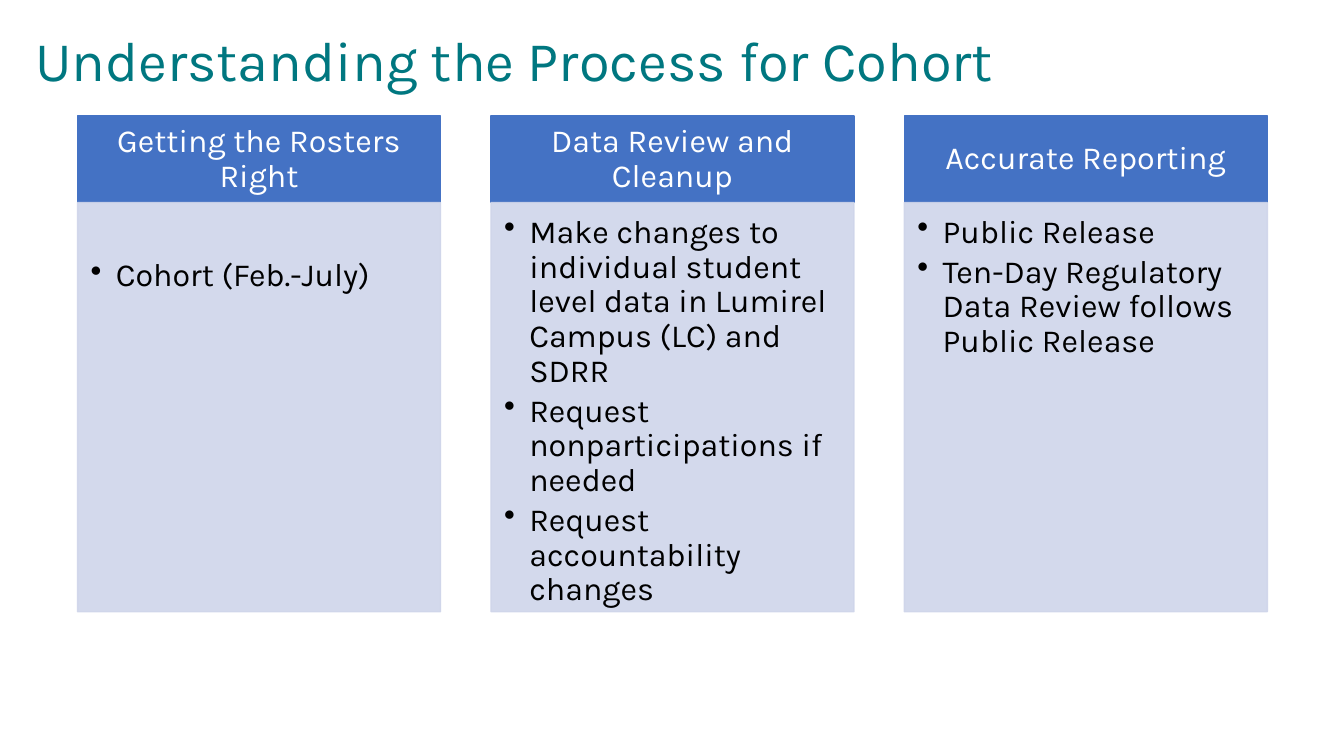
import dataclasses

import lxml.etree
import pptx
import pptx.dml.color
import pptx.enum.shapes
import pptx.enum.text
import pptx.oxml.ns
import pptx.util

Inches = pptx.util.Inches
Pt = pptx.util.Pt
qn = pptx.oxml.ns.qn
Align = pptx.enum.text.PP_ALIGN
Anchor = pptx.enum.text.MSO_ANCHOR


@dataclasses.dataclass(frozen=True)
class Theme:
    """Colours and type sizes of the slide."""

    font: str = "Karla"
    title: str = "007780"
    header: str = "4472C4"
    header_text: str = "FFFFFF"
    panel: str = "CFD5EA"
    panel_text: str = "000000"
    title_size: int = 40
    text_size: int = 23
    panel_opacity: int = 90


THEME = Theme()
COLUMNS = [
    ("Getting the Rosters Right", ["Cohort (Feb.-July)"], 0.56),
    (
        "Data Review and Cleanup",
        [
            "Make changes to individual student level data in Lumirel Campus (LC) and SDRR",
            "Request nonparticipations if needed",
            "Request accountability changes",
        ],
        0.13,
    ),
    (
        "Accurate Reporting",
        ["Public Release", "Ten-Day Regulatory Data Review follows Public Release"],
        0.13,
    ),
]


def rgb(colour):
    """Return a colour object for a hex string."""
    return pptx.dml.color.RGBColor.from_string(colour)


def set_frame(box, anchor, left, top, right, bottom):
    """Set wrapping, anchor and insets in inches, and return the text frame."""
    frame = box.text_frame
    frame.word_wrap = True
    frame.vertical_anchor = anchor
    frame.margin_left, frame.margin_top = Inches(left), Inches(top)
    frame.margin_right, frame.margin_bottom = Inches(right), Inches(bottom)
    return frame


def add_span(para, text, size, colour):
    """Add one run with the theme font."""
    para.line_spacing = 0.9
    span = para.add_run()
    span.text = text
    span.font.name = THEME.font
    span.font.size = Pt(size)
    span.font.color.rgb = rgb(colour)


def set_indent(para, margin, first, bullet=None):
    """Indent a paragraph in inches, with an optional bullet."""
    props = para._p.get_or_add_pPr()
    props.set("marL", str(Inches(margin)))
    props.set("indent", str(Inches(first)))
    if bullet:
        lxml.etree.SubElement(props, qn("a:buChar")).set("char", bullet)


def add_panel(page, left, top, width, height, colour, opacity=100):
    """Add a rectangle whose fill and outline share a colour."""
    panel = page.shapes.add_shape(
        pptx.enum.shapes.MSO_SHAPE.RECTANGLE,
        Inches(left), Inches(top), Inches(width), Inches(height),
    )
    panel.shadow.inherit = False
    panel.fill.solid()
    panel.fill.fore_color.rgb = rgb(colour)
    panel.line.color.rgb = rgb(colour)
    panel.line.width = Pt(1)
    if opacity < 100:
        for tone in panel._element.spPr.iter(qn("a:srgbClr")):
            lxml.etree.SubElement(tone, qn("a:alpha")).set("val", str(opacity * 1000))
    return panel


def add_title(page, text, left, top, width, height):
    """Place the slide title."""
    box = page.shapes.add_textbox(Inches(left), Inches(top), Inches(width), Inches(height))
    para = set_frame(box, Anchor.MIDDLE, 0.1, 0.05, 0.1, 0.05).paragraphs[0]
    set_indent(para, 0.25, 0)
    add_span(para, text, THEME.title_size, THEME.title)


def add_column(page, heading, items, inset, left, top, width, height):
    """Place a heading bar above a panel of bullets."""
    bar_height = 0.86
    bar = add_panel(page, left, top, width, bar_height, THEME.header)
    para = set_frame(bar, Anchor.MIDDLE, 0.18, 0.1, 0.18, 0.1).paragraphs[0]
    para.alignment = Align.CENTER
    add_span(para, heading, THEME.text_size, THEME.header_text)

    panel = add_panel(page, left, top + bar_height, width, height - bar_height,
                      THEME.panel, THEME.panel_opacity)
    frame = set_frame(panel, Anchor.TOP, 0.13, inset, 0.18, 0.2)
    for index, item in enumerate(items):
        para = frame.add_paragraph() if index else frame.paragraphs[0]
        para.alignment = Align.LEFT
        para.level = 1
        para.space_after = Pt(3.5)
        set_indent(para, 0.25, -0.25, "•")
        add_span(para, item, THEME.text_size, THEME.panel_text)


def add_columns(page, left, top, width, height):
    """Spread the columns evenly over the given box."""
    gap = 0.5
    column_width = (width - gap * (len(COLUMNS) - 1)) / len(COLUMNS)
    for index, (heading, items, inset) in enumerate(COLUMNS):
        add_column(page, heading, items, inset,
                   left + index * (column_width + gap), top, column_width, height)


def main():
    """Build and save the deck."""
    deck = pptx.Presentation()
    deck.slide_width, deck.slide_height = Inches(13.33), Inches(7.5)
    page = deck.slides.add_slide(deck.slide_layouts[6])
    add_columns(page, 0.77, 1.15, 11.8, 4.92)
    add_title(page, "Understanding the Process for Cohort", 0, 0, 10.84, 1.25)
    deck.save("out.pptx")


if __name__ == "__main__":
    main()
